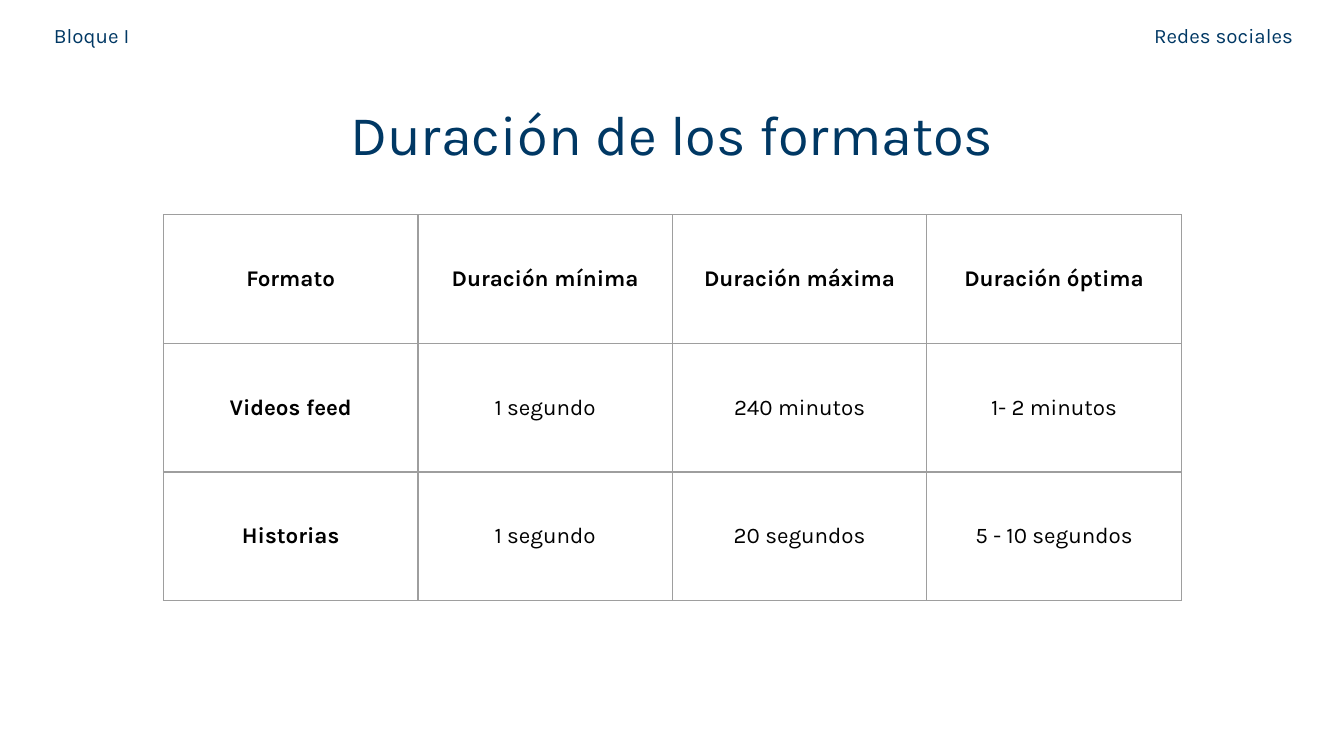
from lxml.etree import SubElement
from pptx import Presentation
from pptx.dml.color import RGBColor
from pptx.enum.text import MSO_ANCHOR as Anchor, MSO_AUTO_SIZE as AutoSize, PP_ALIGN as Align
from pptx.oxml.ns import qn
from pptx.util import Cm, Pt

NAVY = RGBColor(0x00, 0x38, 0x64)
BLACK = RGBColor(0x00, 0x00, 0x00)
GRAY = RGBColor(0x9E, 0x9E, 0x9E)
FONT = "Karla"
INSET = Cm(0.25)


def add_run(paragraph, text, size, color, bold=False):
    run = paragraph.add_run()
    run.text = text
    run.font.name = FONT
    run.font.size = Pt(size)
    run.font.bold = bold
    run.font.color.rgb = color


def add_borders(cell):
    properties = cell._tc.get_or_add_tcPr()
    for side in ("a:lnL", "a:lnR", "a:lnT", "a:lnB"):
        border = SubElement(properties, qn(side), w=str(Pt(0.75)))
        fill = SubElement(border, qn("a:solidFill"))
        SubElement(fill, qn("a:srgbClr"), val=str(GRAY))


prs = Presentation()
prs.slide_width = Cm(25.4)
prs.slide_height = Cm(14.29)
slide = prs.slides.add_slide(prs.slide_layouts[6])

headings = [
    ("Bloque I", 0.77, 0.2, 2.26, 0.99, 11, Align.LEFT),
    ("Duración de los formatos", 1.9, 1.63, 21.6, 1.8, 30, Align.CENTER),
    ("Redes sociales", 19.27, 0.2, 5.42, 0.99, 11, Align.RIGHT),
]
for text, left, top, width, height, size, align in headings:
    heading = slide.shapes.add_textbox(Cm(left), Cm(top), Cm(width), Cm(height))
    frame = heading.text_frame
    frame.word_wrap = True
    frame.auto_size = AutoSize.SHAPE_TO_FIT_TEXT
    frame.margin_left = frame.margin_right = INSET
    frame.margin_top = frame.margin_bottom = INSET
    frame.paragraphs[0].alignment = align
    add_run(frame.paragraphs[0], text, size, NAVY)

durations = [
    ("Formato", "Duración mínima", "Duración máxima", "Duración óptima"),
    ("Videos feed", "1 segundo", "240 minutos", "1- 2 minutos"),
    ("Historias", "1 segundo", "20 segundos", "5 - 10 segundos"),
]
column_width = Cm(4.81)
row_height = Cm(2.43)
table = slide.shapes.add_table(
    len(durations), len(durations[0]), Cm(3.09), Cm(4.06),
    column_width * len(durations[0]), row_height * len(durations),
).table
table.first_row = False
table.horz_banding = False
for column in table.columns:
    column.width = column_width
for row in table.rows:
    row.height = row_height

for r, values in enumerate(durations):
    for c, value in enumerate(values):
        cell = table.cell(r, c)
        add_borders(cell)
        cell.fill.background()
        cell.vertical_anchor = Anchor.MIDDLE
        cell.margin_left = cell.margin_right = INSET
        cell.margin_top = cell.margin_bottom = INSET
        paragraph = cell.text_frame.paragraphs[0]
        paragraph.alignment = Align.CENTER
        add_run(paragraph, value, 12, BLACK, bold=r == 0 or c == 0)

prs.save("out.pptx")
